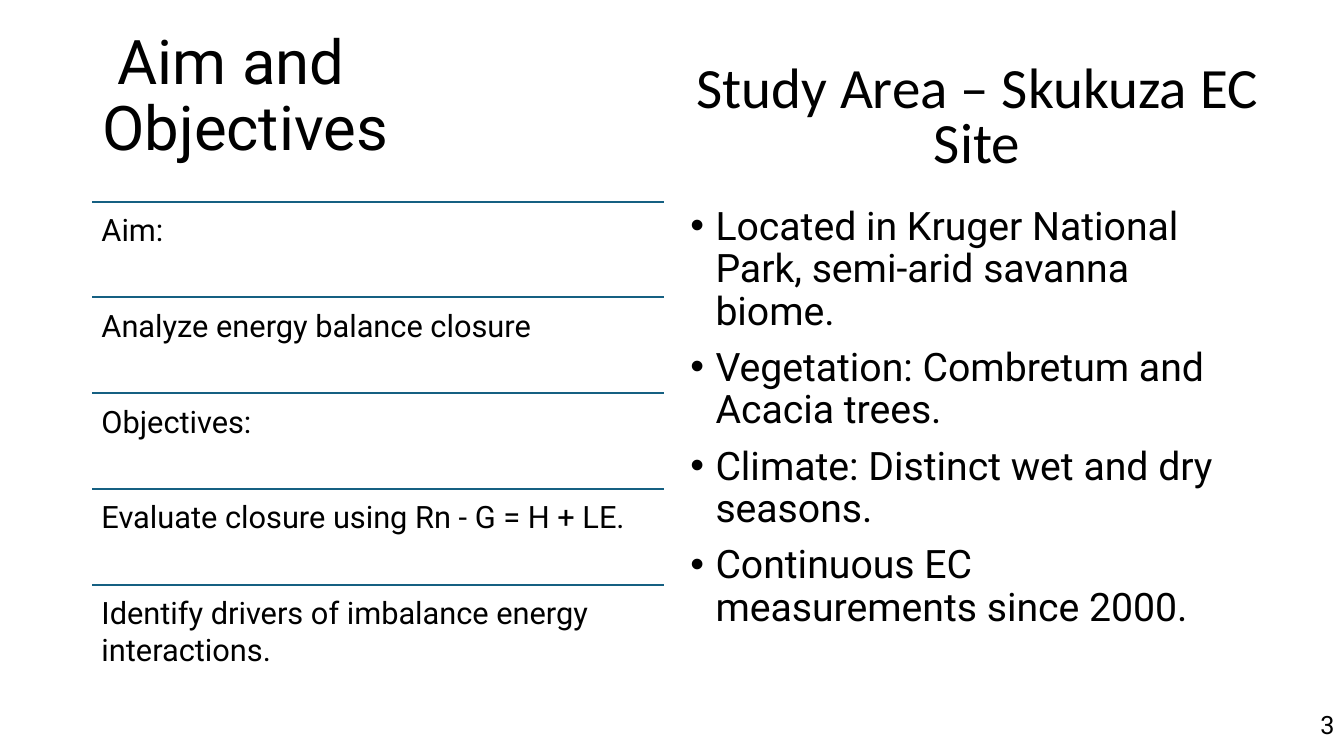
from lxml import etree
from pptx import Presentation
from pptx.dml.color import RGBColor
from pptx.enum.shapes import MSO_CONNECTOR
from pptx.enum.text import MSO_ANCHOR, MSO_AUTO_SIZE, PP_ALIGN
from pptx.oxml.ns import qn
from pptx.util import Inches, Pt

BLACK = RGBColor(0x00, 0x00, 0x00)
WHITE = RGBColor(0xFF, 0xFF, 0xFF)
TEAL = RGBColor(0x15, 0x60, 0x82)
STRAIGHT = MSO_CONNECTOR.STRAIGHT
TOP, MIDDLE = MSO_ANCHOR.TOP, MSO_ANCHOR.MIDDLE
LEFT, CENTER = PP_ALIGN.LEFT, PP_ALIGN.CENTER
NO_AUTOFIT = MSO_AUTO_SIZE.NONE

COLUMNS, ROWS = 160, 90
TITLE_ONLY = 5
LEFT_COLUMN, LIST_TOP = 11, 24
PANEL_WIDTH, ENTRY_HEIGHT = 68, 11.4

ENTRIES = [
    "Aim:",
    "Analyze energy balance closure",
    "Objectives:",
    "Evaluate closure using Rn - G = H + LE.",
    "Identify drivers of imbalance energy interactions.",
]
SITE_FACTS = [
    "Located in Kruger National Park, semi-arid savanna biome.",
    "Vegetation: Combretum and Acacia trees.",
    "Climate: Distinct wet and dry seasons.",
    "Continuous EC measurements since 2000.",
]


class SlideBuilder:
    body_font = "Roboto"
    heading_font = "Calibri"

    def __init__(self, deck):
        self.column = deck.slide_width / COLUMNS
        self.row = deck.slide_height / ROWS
        self.slide = deck.slides.add_slide(deck.slide_layouts[TITLE_ONLY])
        fill = self.slide.background.fill
        fill.solid()
        fill.fore_color.rgb = WHITE

    def place(self, column, row, width, height):
        return (round(column * self.column), round(row * self.row),
                round(width * self.column), round(height * self.row))

    def set_text(self, box, lines, size, font=body_font, align=LEFT, anchor=TOP,
                 spacing=1.0, before=0):
        frame = box.text_frame
        frame.word_wrap = True
        frame.auto_size = NO_AUTOFIT
        frame.vertical_anchor = anchor
        frame.text = "\n".join(lines)
        for para in frame.paragraphs:
            para.alignment = align
            para.line_spacing = spacing
            para.space_before = Pt(before)
            para.font.name = font
            para.font.size = Pt(size)
            para.font.color.rgb = BLACK
        return frame

    def title(self, text, area, **style):
        box = self.slide.shapes.title
        box.left, box.top, box.width, box.height = self.place(*area)
        self.set_text(box, [text], **style)

    def text(self, lines, area, **style):
        box = self.slide.shapes.add_textbox(*self.place(*area))
        return self.set_text(box, lines, **style)

    def bullets(self, lines, area, **style):
        for para in self.text(lines, area, **style).paragraphs:
            properties = para._p.get_or_add_pPr()
            properties.set("marL", str(Inches(0.25)))
            properties.set("indent", str(-Inches(0.25)))
            font = etree.Element(qn("a:buFont"), typeface="Arial")
            bullet = etree.Element(qn("a:buChar"), char="•")
            position = list(properties).index(properties.find(qn("a:defRPr")))
            properties.insert(position, font)
            properties.insert(position + 1, bullet)

    def rule(self, column, row, width):
        left, top, length, _ = self.place(column, row, width, 0)
        line = self.slide.shapes.add_connector(STRAIGHT, left, top, left + length, top)
        line.line.color.rgb = TEAL
        line.line.width = Pt(1.5)
        etree.SubElement(line._element.spPr, qn("a:effectLst"))

    def ruled_list(self, entries, column, row, width, height, size):
        for index, entry in enumerate(entries):
            top = row + index * height
            self.rule(column, top, width)
            frame = self.text([entry], (column, top, width, height), size=size)
            frame.margin_left = frame.margin_right = Inches(0.09)
            frame.margin_top = frame.margin_bottom = Inches(0.09)


def main():
    deck = Presentation()
    deck.slide_width, deck.slide_height = Inches(13.33), Inches(7.5)
    page = SlideBuilder(deck)
    page.title(" Aim and Objectives", (LEFT_COLUMN, 4.8, 65.4, 13.6),
               size=44, anchor=MIDDLE, spacing=0.9)
    page.ruled_list(ENTRIES, LEFT_COLUMN, LIST_TOP, PANEL_WIDTH, ENTRY_HEIGHT, size=22)
    page.bullets(SITE_FACTS, (81, LIST_TOP, PANEL_WIDTH, 57),
                 size=28, spacing=0.9, before=10)
    page.text(["Study Area – Skukuza EC Site"], (80, 6.7, 72.6, 15), size=40.7,
              font=page.heading_font, align=CENTER, anchor=MIDDLE, spacing=0.8)
    page.text(["3"], (156, 83.8, 4, 4.8), size=18)
    deck.save("out.pptx")


if __name__ == "__main__":
    main()
